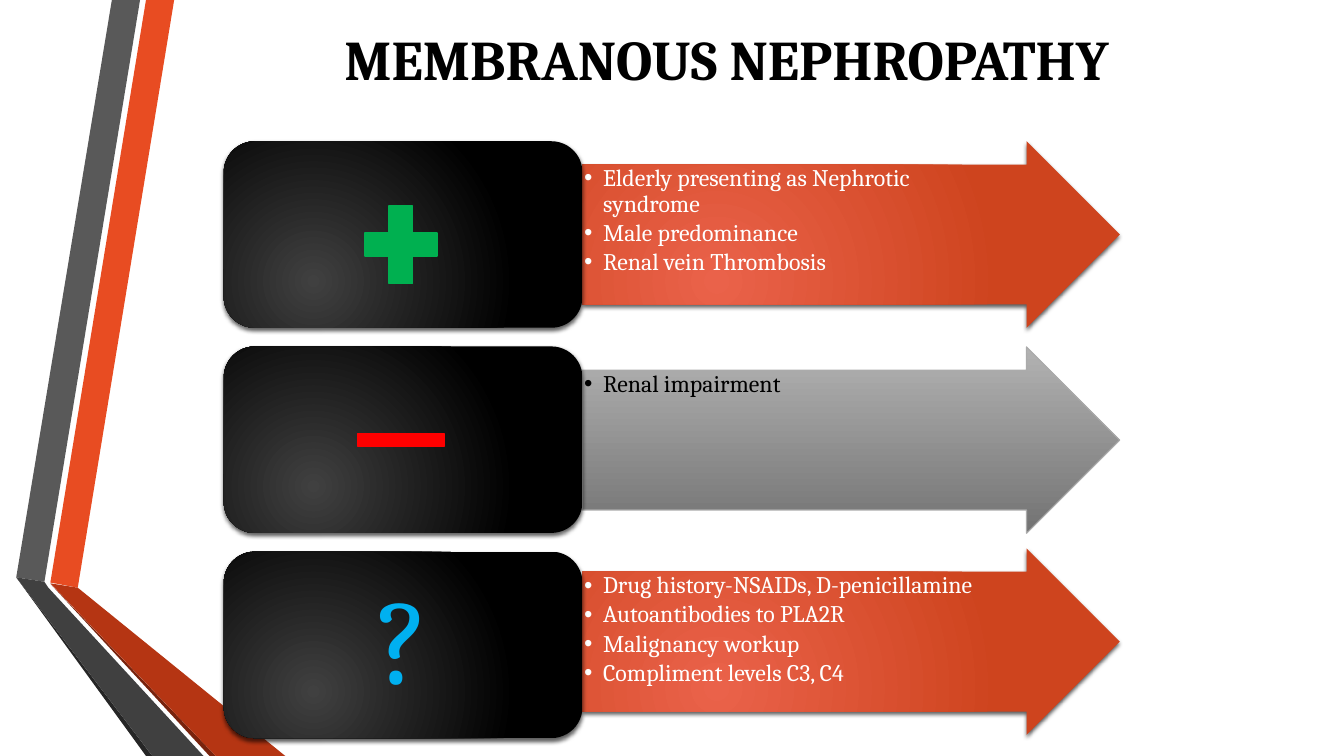
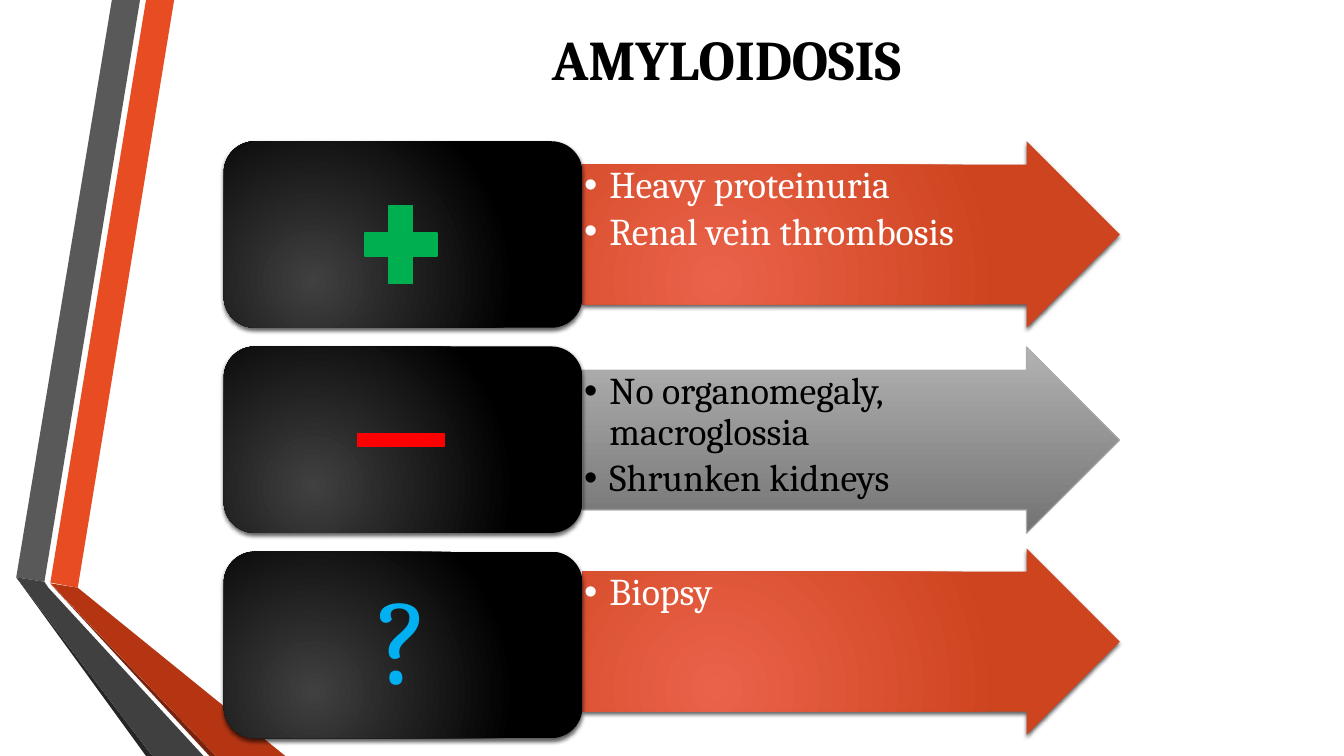
from lxml import etree
from pptx import Presentation
from pptx.dml.color import RGBColor
from pptx.enum.shapes import MSO_SHAPE
from pptx.enum.text import MSO_ANCHOR, MSO_AUTO_SIZE, PP_ALIGN
from pptx.oxml.ns import qn
from pptx.util import Cm, Pt

ARROW = MSO_SHAPE.RIGHT_ARROW
CARD = MSO_SHAPE.ROUNDED_RECTANGLE
PLUS = MSO_SHAPE.MATH_PLUS
MINUS = MSO_SHAPE.MATH_MINUS
TOP, MIDDLE = MSO_ANCHOR.TOP, MSO_ANCHOR.MIDDLE
LEFT, CENTER = PP_ALIGN.LEFT, PP_ALIGN.CENTER
NO_AUTOFIT = MSO_AUTO_SIZE.NONE
TITLE_ONLY = 5

FONT = "Cambria"
BLACK, WHITE = "000000", "FFFFFF"
GREEN, RED, BLUE = "00B050", "FF0000", "00B0F0"
CARD_FILL = ("404040", BLACK)
ORANGE_FILL = ("EA624A", "CE441E")
GREY_FILL = ("B2B2B2", "737373")
GREY_LINE = "ABABAB"

# Side ribbons: colour and corners in hundredths of a centimetre
RIBBONS = [
    ("E84C22", [(127, 1468), (196, 1481), (439, 0), (368, 0)]),
    ("595959", [(353, 0), (282, 0), (41, 1455), (112, 1466)]),
    ("262626", [(41, 1455), (368, 1905), (384, 1905)]),
    ("78230D", [(127, 1471), (528, 1905), (544, 1905)]),
    ("B53513", [(127, 1470), (544, 1905), (719, 1905), (196, 1481)]),
    ("404040", [(513, 1905), (122, 1481), (112, 1466), (41, 1455), (384, 1905)]),
]

CARD_LEFT, CARD_WIDTH, ROW_HEIGHT = 5.64, 9.04, 4.7
CARD_TOP, CARD_PITCH = 3.56, 5.17
ARROW_LEFT, ARROW_WIDTH = CARD_LEFT + CARD_WIDTH, 13.54
ARROW_TOPS = (3.56, 8.74, 13.82)

# Title, text size, hanging indent, and the findings for, against and to check
SLIDES = [
    ("MEMBRANOUS NEPHROPATHY", 17, 0.48, [
        ["Elderly presenting as Nephrotic syndrome", "Male predominance",
         "Renal vein Thrombosis"],
        ["Renal impairment"],
        ["Drug history-NSAIDs, D-penicillamine", "Autoantibodies to PLA2R",
         "Malignancy workup", "Compliment levels C3, C4"],
    ]),
    ("AMYLOIDOSIS", 27, 0.64, [
        ["Heavy proteinuria", "Renal vein thrombosis"],
        ["No organomegaly, macroglossia", "Shrunken kidneys"],
        ["Biopsy"],
    ]),
]


def rgb(value):
    return RGBColor.from_string(value)


def add_xml(parent, tag, **attributes):
    return etree.SubElement(parent, qn(tag), attributes)


class Deck:
    """Holds the shared style and the slide being drawn."""

    def __init__(self):
        self.presentation = Presentation()
        self.presentation.slide_width = Cm(33.87)
        self.presentation.slide_height = Cm(19.05)
        self.slide = None

    def new_slide(self, title):
        layout = self.presentation.slide_layouts[TITLE_ONLY]
        self.slide = self.presentation.slides.add_slide(layout)
        for color, corners in RIBBONS:
            self.ribbon(color, corners)
        self.title(title)

    def title(self, text):
        shape = self.slide.shapes.title
        shape.left, shape.top = Cm(4.52), Cm(0.13)
        shape.width, shape.height = Cm(27.58), Cm(2.67)
        frame = shape.text_frame
        frame.text = text
        frame.auto_size = NO_AUTOFIT
        frame.vertical_anchor = MIDDLE
        frame.paragraphs[0].alignment = CENTER
        self.style_runs(frame.paragraphs[0], 40, BLACK, bold=True)

    def ribbon(self, color, corners):
        builder = self.slide.shapes.build_freeform(*corners[0], scale=Cm(0.01))
        builder.add_line_segments(corners[1:], close=True)
        self.paint(builder.convert_to_shape(), color)

    def shape(self, kind, left, top, width, height):
        return self.slide.shapes.add_shape(
            kind, Cm(left), Cm(top), Cm(width), Cm(height))

    def paint(self, shape, color, line=None, line_width=1.25):
        shape.fill.solid()
        shape.fill.fore_color.rgb = rgb(color)
        self.outline(shape, line, line_width)

    def outline(self, shape, color, width):
        shape.shadow.inherit = False
        if color:
            shape.line.color.rgb = rgb(color)
            shape.line.width = Pt(width)
        else:
            shape.line.fill.background()

    def gradient(self, shape, colors, line=None):
        """Outlined shapes run top to bottom; the others glow and cast a shadow."""
        shape.fill.gradient()
        for stop, color, position in zip(shape.fill.gradient_stops, colors, (0, 1)):
            stop.color.rgb = rgb(color)
            stop.position = position
        self.outline(shape, line, 0.75)
        if line:
            shape.fill.gradient_angle = 270
        else:
            self.glow(shape)
            self.drop_shadow(shape)

    def glow(self, shape):
        gradient = shape._element.spPr.find(qn("a:gradFill"))
        gradient.remove(gradient.find(qn("a:lin")))
        circle = add_xml(gradient, "a:path", path="circle")
        add_xml(circle, "a:fillToRect", l="50000", t="100000", r="100000", b="50000")

    def drop_shadow(self, shape):
        effects = shape._element.spPr.find(qn("a:effectLst"))
        shadow = add_xml(effects, "a:outerShdw", blurRad="38100", dist="25400",
                         dir="5400000", rotWithShape="0")
        color = add_xml(shadow, "a:srgbClr", val=BLACK)
        add_xml(color, "a:alpha", val="64000")

    def style_runs(self, paragraph, size, color, bold=False):
        for run in paragraph.runs:
            run.font.name = FONT
            run.font.size = Pt(size)
            run.font.bold = bold
            run.font.color.rgb = rgb(color)

    def arrow(self, top, items, size, indent, colors, text_color, line=None):
        """Block arrow with a bulleted list inside."""
        arrow = self.shape(ARROW, ARROW_LEFT, top, ARROW_WIDTH, ROW_HEIGHT)
        arrow.adjustments[0] = 0.75
        self.gradient(arrow, colors, line)
        frame = arrow.text_frame
        frame.text = "\n".join(items)
        frame.word_wrap = True
        frame.vertical_anchor = TOP
        frame.margin_left = frame.margin_top = frame.margin_bottom = Cm(0.04)
        frame.margin_right = Cm(1.2)
        for paragraph in frame.paragraphs:
            paragraph.alignment = LEFT
            paragraph.line_spacing = 0.9
            paragraph.space_after = Pt(round(size * 0.14, 1))
            self.bullet(paragraph, indent)
            self.style_runs(paragraph, size, text_color)

    def bullet(self, paragraph, indent):
        properties = paragraph._p.get_or_add_pPr()
        properties.set("marL", str(Cm(indent)))
        properties.set("indent", str(-Cm(indent)))
        add_xml(properties, "a:buFont", typeface="Arial")
        add_xml(properties, "a:buChar", char="•")

    def card(self, row, text=""):
        top = CARD_TOP + row * CARD_PITCH
        card = self.shape(CARD, CARD_LEFT, top, CARD_WIDTH, ROW_HEIGHT)
        self.gradient(card, CARD_FILL)
        if text:
            frame = card.text_frame
            frame.text = text
            frame.vertical_anchor = MIDDLE
            frame.paragraphs[0].alignment = CENTER
            frame.paragraphs[0].line_spacing = 0.9
            self.style_runs(frame.paragraphs[0], 88, BLUE)

    def sign(self, kind, left, top, width, height, color):
        self.paint(self.shape(kind, left, top, width, height), color, color)


def main():
    deck = Deck()
    arrow_styles = [(ORANGE_FILL, WHITE), (GREY_FILL, BLACK, GREY_LINE),
                    (ORANGE_FILL, WHITE)]
    for title, size, indent, findings in SLIDES:
        deck.new_slide(title)
        rows = zip(ARROW_TOPS, findings, arrow_styles, ("", "", "?"))
        for row, (top, items, style, symbol) in enumerate(rows):
            deck.arrow(top, items, size, indent, *style)
            deck.card(row, symbol)
        deck.sign(PLUS, 8.86, 4.83, 2.49, 2.67, GREEN)
        deck.sign(MINUS, 8.64, 10.39, 2.95, 1.4, RED)
    deck.presentation.save("out.pptx")


if __name__ == "__main__":
    main()
